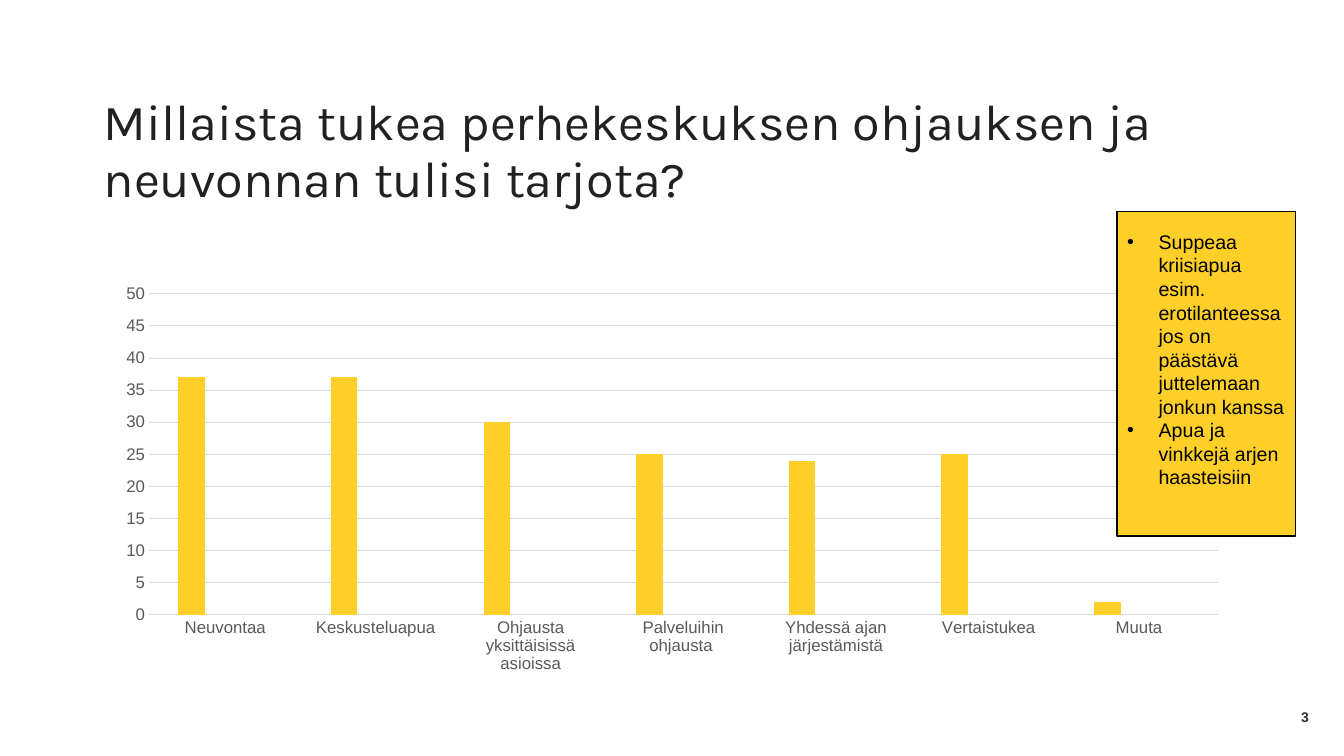
from dataclasses import dataclass

from lxml import etree
from pptx import Presentation
from pptx.chart.data import CategoryChartData
from pptx.dml.color import RGBColor
from pptx.enum.chart import XL_CHART_TYPE, XL_TICK_MARK
from pptx.enum.shapes import MSO_SHAPE
from pptx.enum.text import MSO_ANCHOR, MSO_AUTO_SIZE, PP_ALIGN
from pptx.oxml.ns import qn
from pptx.util import Pt

COLUMN = XL_CHART_TYPE.COLUMN_CLUSTERED
NO_TICK = XL_TICK_MARK.NONE
RECT = MSO_SHAPE.RECTANGLE
TOP, MIDDLE = MSO_ANCHOR.TOP, MSO_ANCHOR.MIDDLE
LEFT, RIGHT = PP_ALIGN.LEFT, PP_ALIGN.RIGHT


@dataclass(frozen=True)
class Theme:
    ink: RGBColor = RGBColor.from_string("212121")
    black: RGBColor = RGBColor.from_string("000000")
    label: RGBColor = RGBColor.from_string("595959")
    number: RGBColor = RGBColor.from_string("313131")
    grid: RGBColor = RGBColor.from_string("D9D9D9")
    yellow: RGBColor = RGBColor.from_string("FFCF29")
    blue: RGBColor = RGBColor.from_string("75A1FF")
    olive: RGBColor = RGBColor.from_string("868651")
    head: str = "Karla"
    body: str = "Arial"
    title: float = 36
    note: float = 14
    axis: float = 12
    small: float = 10


theme = Theme()


def style(font, size, color, face=theme.body, bold=False):
    font.size, font.name, font.bold = Pt(size), face, bold
    font.color.rgb = color


def write(shape, *lines, size, color, face=theme.body, bold=False, align=LEFT,
          anchor=TOP, inset=(0, 0, 0, 0), spacing=None, bullet=None, indent=22.5):
    """Fill a shape with one paragraph per line; inset is left, top, right, bottom."""
    frame = shape.text_frame
    frame.word_wrap = True
    frame.auto_size = MSO_AUTO_SIZE.NONE
    frame.vertical_anchor = anchor
    (frame.margin_left, frame.margin_top,
     frame.margin_right, frame.margin_bottom) = map(Pt, inset)
    frame.text = "\n".join(lines)
    for para in frame.paragraphs:
        para.alignment = align
        if spacing:
            para.line_spacing = spacing
        if bullet:
            props = para._p.get_or_add_pPr()
            props.set("marL", str(Pt(indent)))
            props.set("indent", str(-Pt(indent)))
            etree.SubElement(props, qn("a:buFont")).set("typeface", theme.body)
            etree.SubElement(props, qn("a:buChar")).set("char", bullet)
        for run in para.runs:
            style(run.font, size, color, face, bold)


deck = Presentation()
deck.slide_width, deck.slide_height = Pt(960), Pt(540)
slide = deck.slides.add_slide(deck.slide_layouts[5])
shapes = slide.shapes

# Title
title = shapes.title
title.left, title.top, title.width, title.height = map(Pt, (74, 67.5, 812, 97))
write(title, "Millaista tukea perhekeskuksen ohjauksen ja neuvonnan tulisi tarjota?",
      size=theme.title, color=theme.ink, face=theme.head, spacing=0.95)

# Chart
support = {
    "Neuvontaa": 37,
    "Keskusteluapua ": 37,
    "Ohjausta yksittäisissä asioissa": 30,
    "Palveluihin ohjausta ": 25,
    "Yhdessä ajan järjestämistä": 24,
    "Vertaistukea": 25,
    "Muuta ": 2,
}
data = CategoryChartData()
data.categories = list(support)
data.add_series("Series 1", list(support.values()))
for name in ("Series 2", "Series 3"):
    data.add_series(name, [None] * len(support))

chart = shapes.add_chart(COLUMN, Pt(74), Pt(195), Pt(812), Pt(291), data).chart
chart.has_title = False
chart.has_legend = False
style(chart.font, theme.small, theme.black)

plot = chart.plots[0]
plot.gap_width, plot.overlap = 219, -27
plot.vary_by_categories = False
for series, color in zip(plot.series, (theme.yellow, theme.blue, theme.olive)):
    series.format.fill.solid()
    series.format.fill.fore_color.rgb = color
    series.invert_if_negative = False

cats, vals = chart.category_axis, chart.value_axis
for axis in (cats, vals):
    axis.major_tick_mark = axis.minor_tick_mark = NO_TICK
    style(axis.tick_labels.font, theme.axis, theme.label)
vals.minimum_scale, vals.maximum_scale, vals.major_unit = 0, 52, 5
vals.has_major_gridlines = True
vals.format.line.fill.background()
for line in (cats.format.line, vals.major_gridlines.format.line):
    line.width = Pt(0.75)
    line.color.rgb = theme.grid

# Slide number
number = shapes.add_textbox(Pt(719), Pt(497.5), Pt(216), Pt(29))
write(number, "3", size=theme.small, color=theme.number, bold=True,
      align=RIGHT, anchor=MIDDLE)

# Note over the chart
note = shapes.add_shape(RECT, Pt(798), Pt(151), Pt(127.5), Pt(232))
note.shadow.inherit = False
note.fill.solid()
note.fill.fore_color.rgb = theme.yellow
note.line.color.rgb = theme.black
note.line.width = Pt(1)
write(note,
      "Suppeaa kriisiapua esim. erotilanteessa jos on päästävä "
      "juttelemaan jonkun kanssa",
      "Apua ja vinkkejä arjen haasteisiin",
      size=theme.note, color=theme.black, anchor=MIDDLE,
      inset=(7.2, 3.6, 7.2, 24.3), bullet="•")

deck.save("out.pptx")
